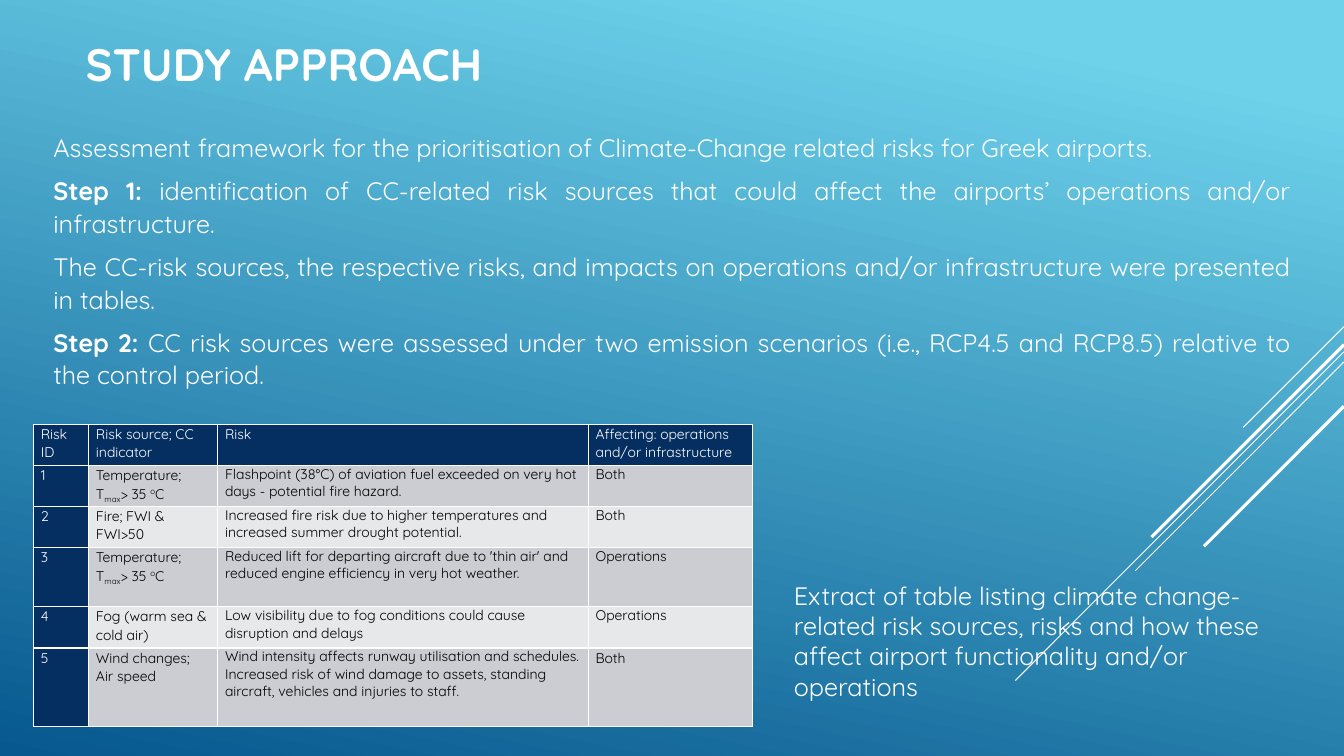
from pptx import Presentation
from pptx.dml.color import RGBColor
from pptx.enum.shapes import MSO_CONNECTOR
from pptx.enum.text import MSO_ANCHOR, PP_ALIGN
from pptx.oxml.ns import qn
from pptx.util import Pt
from lxml.etree import SubElement

COLORS = {"white": "FFFFFF", "black": "000000", "navy": "052F61",
          "dark": "CCCDD2", "light": "E7E8EA", "sky": "6ED2EB", "sea": "06588E"}


def color(name):
    return RGBColor.from_string(COLORS[name])


def style(para, size, ink="white", bold=False, space=1.0):
    para.font.name = "Quicksand"
    para.font.size = Pt(size)
    para.font.bold = bold
    para.font.color.rgb = color(ink)
    para.line_spacing = space


deck = Presentation()
deck.slide_width, deck.slide_height = Pt(960), Pt(540)
slide = deck.slides.add_slide(deck.slide_layouts[6])
shapes = slide.shapes

# Background gradient
back = slide.background.fill
back.gradient()
back.gradient_angle = 258
for stop, name, place in zip(back.gradient_stops, ("sky", "sea"), (0.1, 1)):
    stop.color.rgb = color(name)
    stop.position = place

# Diagonal lines from the right edge: top, reach, width
for top, reach, width in [(233.3, 72, 0.75), (251.3, 234.7, 0.75),
                          (258.6, 149, 0.75), (246.2, 137.5, 2.25),
                          (290.2, 100, 2.25)]:
    line = shapes.add_connector(MSO_CONNECTOR.STRAIGHT, Pt(960), Pt(top),
                                Pt(960 - reach), Pt(top + reach))
    line.line.color.rgb = color("white")
    line.line.width = Pt(width)
    SubElement(line._element.spPr, qn("a:effectLst"))

# Title
title = shapes.add_textbox(Pt(54), Pt(21), Pt(672), Pt(47.5)).text_frame
title.word_wrap = True
title.vertical_anchor = MSO_ANCHOR.BOTTOM
title.text = "STUDY APPROACH"
style(title.paragraphs[0], 32.4, bold=True, space=0.9)

# Risk table
TMAX = [("Temperature; T", 0), ("max", -25), ("> 35 ", 0), ("o", 30), ("C", 0)]
ROWS = [
    ("Risk ID", "Risk source; CC indicator", "Risk",
     "Affecting: operations and/or infrastructure"),
    ("1", TMAX, "Flashpoint (38°C) of aviation fuel exceeded on very hot days "
     "- potential fire hazard.", "Both"),
    ("2", "Fire; FWI & FWI>50", "Increased fire risk due to higher temperatures "
     "and increased summer drought potential.", "Both"),
    ("3", TMAX, "Reduced lift for departing aircraft due to 'thin air' and "
     "reduced engine efficiency in very hot weather.", "Operations"),
    ("4", "Fog (warm sea & cold air)", "Low visibility due to fog conditions "
     "could cause disruption and delays", "Operations"),
    ("5", "Wind changes; Air speed", "Wind intensity affects runway utilisation "
     "and schedules.\nIncreased risk of wind damage to assets, standing "
     "aircraft, vehicles and injuries to staff.", "Both"),
]
WIDTHS = [39.4, 92.2, 264.7, 117.4]
HEIGHTS = [29.3, 29.3, 29.3, 42.5, 29.5, 56.2]
table = shapes.add_table(len(ROWS), len(WIDTHS), Pt(24), Pt(303),
                         Pt(sum(WIDTHS)), Pt(sum(HEIGHTS))).table
table.first_row = table.horz_banding = False
for col, width in zip(table.columns, WIDTHS):
    col.width = Pt(width)
for row, height in zip(table.rows, HEIGHTS):
    row.height = Pt(height)

for i, row in enumerate(ROWS):
    for j, text in enumerate(row):
        cell = table.cell(i, j)
        cell.margin_left = cell.margin_right = Pt(5.2)
        cell.margin_top = cell.margin_bottom = 0
        head = i == 0 or j == 0
        # Borders come before the fill
        props = cell._tc.get_or_add_tcPr()
        for side in ("lnL", "lnR", "lnT", "lnB"):
            edge = SubElement(props, qn("a:" + side), w=str(Pt(1)))
            solid = SubElement(edge, qn("a:solidFill"))
            SubElement(solid, qn("a:srgbClr"), val=COLORS["white"])
        cell.fill.solid()
        cell.fill.fore_color.rgb = color(
            "navy" if head else "dark" if i % 2 else "light")
        # Text, with raised and lowered runs
        frame = cell.text_frame
        if text is TMAX:
            for part, shift in TMAX:
                run = frame.paragraphs[0].add_run()
                run.text = part
                if shift:
                    run._r.get_or_add_rPr().set("baseline", str(shift * 1000))
        else:
            frame.text = text
        wide = head or j == 1 or (i, j) == (5, 3)
        for para in frame.paragraphs:
            style(para, 10, "white" if head else "black",
                  space=1.07 if wide else 1.0)

# Table caption
note = shapes.add_textbox(Pt(560), Pt(411), Pt(365), Pt(94.5)).text_frame
note.word_wrap = True
note.text = ("Extract of table listing climate change-related risk sources, risks "
             "and how these affect airport functionality and/or operations")
style(note.paragraphs[0], 18)

# Steps: bold lead, then text
STEPS = [
    ("", "Assessment framework for the prioritisation of Climate-Change related "
     "risks for Greek airports."),
    ("Step 1: ", "identification of CC-related risk sources that could affect the "
     "airports’ operations and/or infrastructure."),
    ("", "The CC-risk sources, the respective risks, and impacts on operations "
     "and/or infrastructure were presented in tables."),
    ("Step 2: ", "CC risk sources were assessed under two emission scenarios "
     "(i.e., RCP4.5 and RCP8.5) relative to the control period."),
]
body = shapes.add_textbox(Pt(31), Pt(89.3), Pt(898), Pt(193)).text_frame
body.word_wrap = True
for k, (lead, text) in enumerate(STEPS):
    para = body.add_paragraph() if k else body.paragraphs[0]
    style(para, 18, space=1.07)
    para.alignment = PP_ALIGN.JUSTIFY
    para.space_after = Pt(8)
    if lead:
        run = para.add_run()
        run.text = lead
        run.font.bold = True
    para.add_run().text = text

deck.save("out.pptx")
